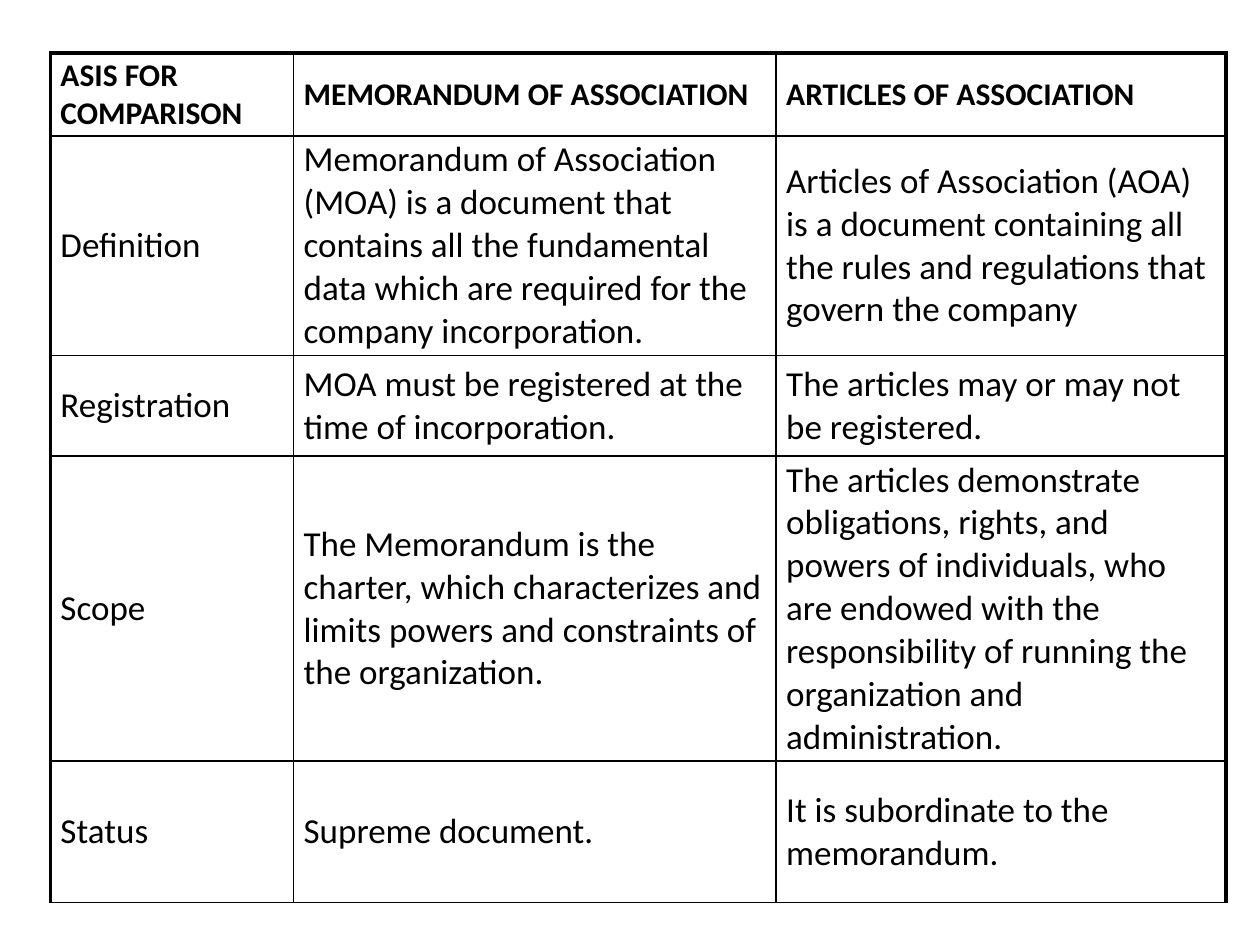
from lxml.etree import SubElement
from pptx import Presentation
from pptx.dml.color import RGBColor
from pptx.enum.text import MSO_ANCHOR as Anchor
from pptx.oxml.ns import qn
from pptx.util import Inches, Pt

COLUMN_SHARES = [19.3, 38.3, 35.7]
ROW_SHARES = [8.8, 21.07, 10.67, 25.73, 14.93]
COMPARISON = [
    ("ASIS FOR COMPARISON", "MEMORANDUM OF ASSOCIATION", "ARTICLES OF ASSOCIATION"),
    ("Definition",
     "Memorandum of Association (MOA) is a document that contains all the "
     "fundamental data which are required for the company incorporation.",
     "Articles of Association (AOA) is a document containing all the rules "
     "and regulations that govern the company"),
    ("Registration",
     "MOA must be registered at the time of incorporation.",
     "The articles may or may not be registered."),
    ("Scope",
     "The Memorandum is the charter, which characterizes and limits powers "
     "and constraints of the organization.",
     "The articles demonstrate obligations, rights, and powers of individuals, "
     "who are endowed with the responsibility of running the organization "
     "and administration."),
    ("Status", "Supreme document.", "It is subordinate to the memorandum."),
]


def color(hex_code):
    return RGBColor.from_string(hex_code)


def write(frame, text, font="Calibri", size=20, bold=False, ink="000000"):
    span = frame.paragraphs[0].add_run()
    span.text = text
    span.font.name = font
    span.font.size = Pt(size)
    span.font.bold = bold
    span.font.color.rgb = color(ink)


class Page:
    ink = "000000"
    thin, thick = 1, 2.25
    header_size, body_size = 18, 20

    def __init__(self, deck):
        self.deck = deck
        self.slide = deck.slides.add_slide(deck.slide_layouts[6])

    def across(self, percent):
        return round(self.deck.slide_width * percent / 100)

    def down(self, percent):
        return round(self.deck.slide_height * percent / 100)

    def border(self, cell, side, width):
        line = SubElement(cell._tc.get_or_add_tcPr(), qn(f"a:ln{side}"), w=str(Pt(width)))
        fill = SubElement(line, qn("a:solidFill"))
        SubElement(fill, qn("a:srgbClr"), val=self.ink)

    def cell(self, cell, text, header, widths):
        cell.vertical_anchor = Anchor.MIDDLE
        cell.margin_left = cell.margin_right = Inches(0.08)
        cell.margin_top = cell.margin_bottom = Inches(0.02)
        for side, width in widths.items():
            self.border(cell, side, width)
        cell.fill.background()
        size = self.header_size if header else self.body_size
        write(cell.text_frame, text, size=size, bold=header, ink=self.ink)

    def table(self, rows, left, top, height, columns, row_heights):
        frame = self.slide.shapes.add_table(
            len(rows), len(columns), self.across(left), self.down(top),
            self.across(sum(columns)), self.down(height))
        table = frame.table
        table.first_row = table.horz_banding = False
        for column, share in zip(table.columns, columns):
            column.width = self.across(share)
        for row, share in zip(table.rows, row_heights):
            row.height = self.down(share)
        frame.height = self.down(height)
        last = len(columns) - 1
        for r, texts in enumerate(rows):
            for c, text in enumerate(texts):
                widths = {
                    "L": self.thick if c == 0 else self.thin,
                    "R": self.thick if c == last else self.thin,
                    "T": self.thick if r == 0 else self.thin,
                    "B": self.thin,
                }
                self.cell(table.cell(r, c), text, r == 0, widths)


def main():
    deck = Presentation()
    deck.slide_width, deck.slide_height = Inches(10), Inches(7.5)
    page = Page(deck)
    page.table(COMPARISON, left=4, top=5.6, height=88.93,
               columns=COLUMN_SHARES, row_heights=ROW_SHARES)
    deck.save("out.pptx")


if __name__ == "__main__":
    main()
